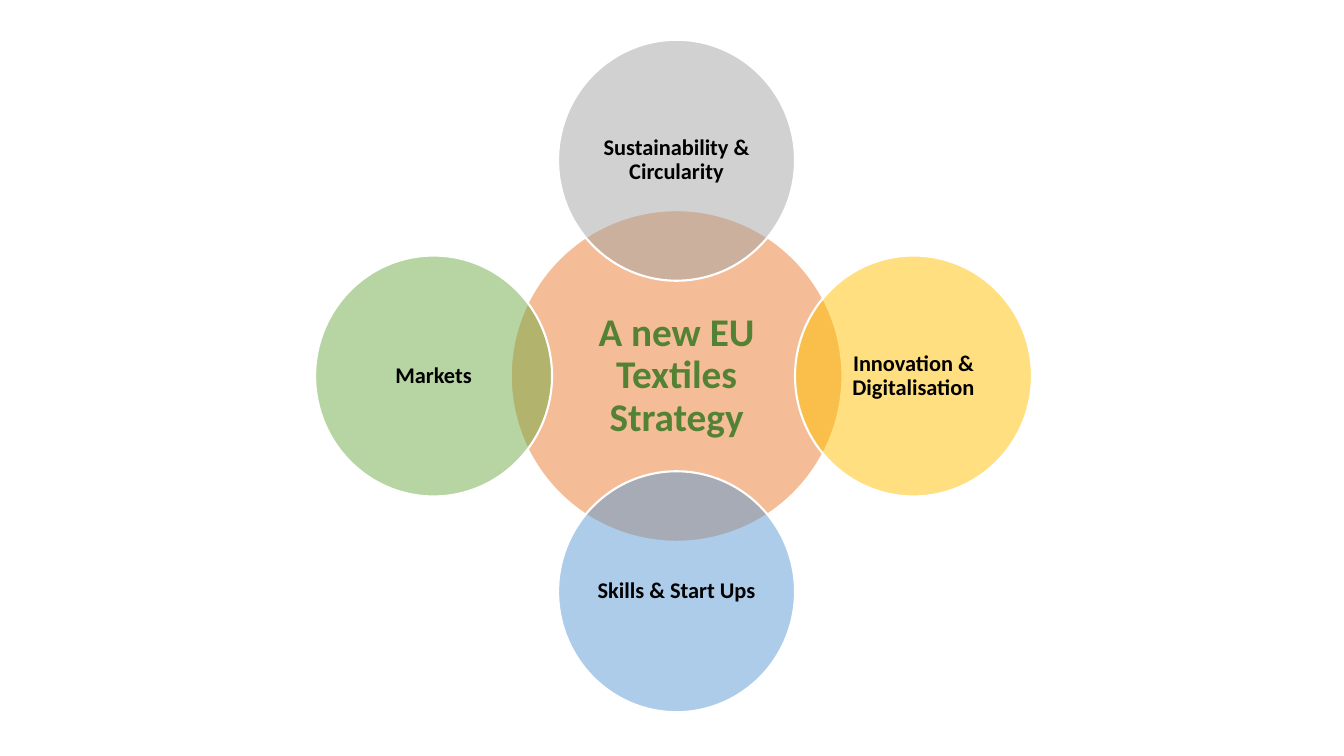
import pptx
import pptx.util
import pptx.dml.color
import pptx.enum.shapes
import pptx.enum.text
import pptx.oxml.ns
import lxml.etree
from pptx.util import Inches

COLORS = {
    "orange": "ED7D31",
    "grey": "A5A5A5",
    "yellow": "FFC000",
    "blue": "5B9BD5",
    "green": "70AD47",
    "title": "548235",
    "label": "000000",
    "outline": "FFFFFF",
}


class Deck:
    font = "Calibri"
    opacity = 50

    def __init__(self, width, height):
        self.prs = pptx.Presentation()
        self.prs.slide_width = Inches(width)
        self.prs.slide_height = Inches(height)
        self.s = self.prs.slides.add_slide(self.prs.slide_layouts[6])

    def rgb(self, name):
        return pptx.dml.color.RGBColor.from_string(COLORS[name])

    def circle(self, text, cx, cy, width, height, fill, size, color, inset):
        sp = self.s.shapes.add_shape(
            pptx.enum.shapes.MSO_SHAPE.OVAL,
            Inches(cx - width / 2), Inches(cy - height / 2),
            Inches(width), Inches(height))
        sp.shadow.inherit = False
        sp.fill.solid()
        sp.fill.fore_color.rgb = self.rgb(fill)
        clr = sp._element.spPr.find(pptx.oxml.ns.qn("a:solidFill"))[0]
        alpha = lxml.etree.SubElement(clr, pptx.oxml.ns.qn("a:alpha"))
        alpha.set("val", str(self.opacity * 1000))
        sp.line.color.rgb = self.rgb("outline")
        sp.line.width = pptx.util.Pt(1.5)

        tf = sp.text_frame
        tf.word_wrap = True
        tf.vertical_anchor = pptx.enum.text.MSO_ANCHOR.MIDDLE
        tf.margin_left = tf.margin_right = Inches(inset)
        tf.margin_top = tf.margin_bottom = Inches(inset)
        p = tf.paragraphs[0]
        p.text = text
        p.alignment = pptx.enum.text.PP_ALIGN.CENTER
        p.line_spacing = 0.9
        p.font.name = self.font
        p.font.size = pptx.util.Pt(size)
        p.font.bold = True
        p.font.color.rgb = self.rgb(color)

    def hub(self, text, cx, cy, fill):
        self.circle(text, cx, cy, 3.29, 3.29, fill, 28, "title", 0.04)

    def satellite(self, text, cx, cy, fill):
        self.circle(text, cx, cy, 2.35, 2.39, fill, 16, "label", 0.02)


def main():
    deck = Deck(13.33, 7.5)
    cx, cy, rise = 6.71, 3.73, 2.14
    deck.hub("A new EU Textiles Strategy", cx, cy, "orange")
    for text, dx, dy, fill in [
        ("Sustainability & Circularity", 0, -rise, "grey"),
        ("Innovation & Digitalisation", 2.35, 0, "yellow"),
        ("Skills & Start Ups", 0, rise, "blue"),
        ("Markets", -2.41, 0, "green"),
    ]:
        deck.satellite(text, cx + dx, cy + dy, fill)
    deck.prs.save("out.pptx")


if __name__ == "__main__":
    main()
